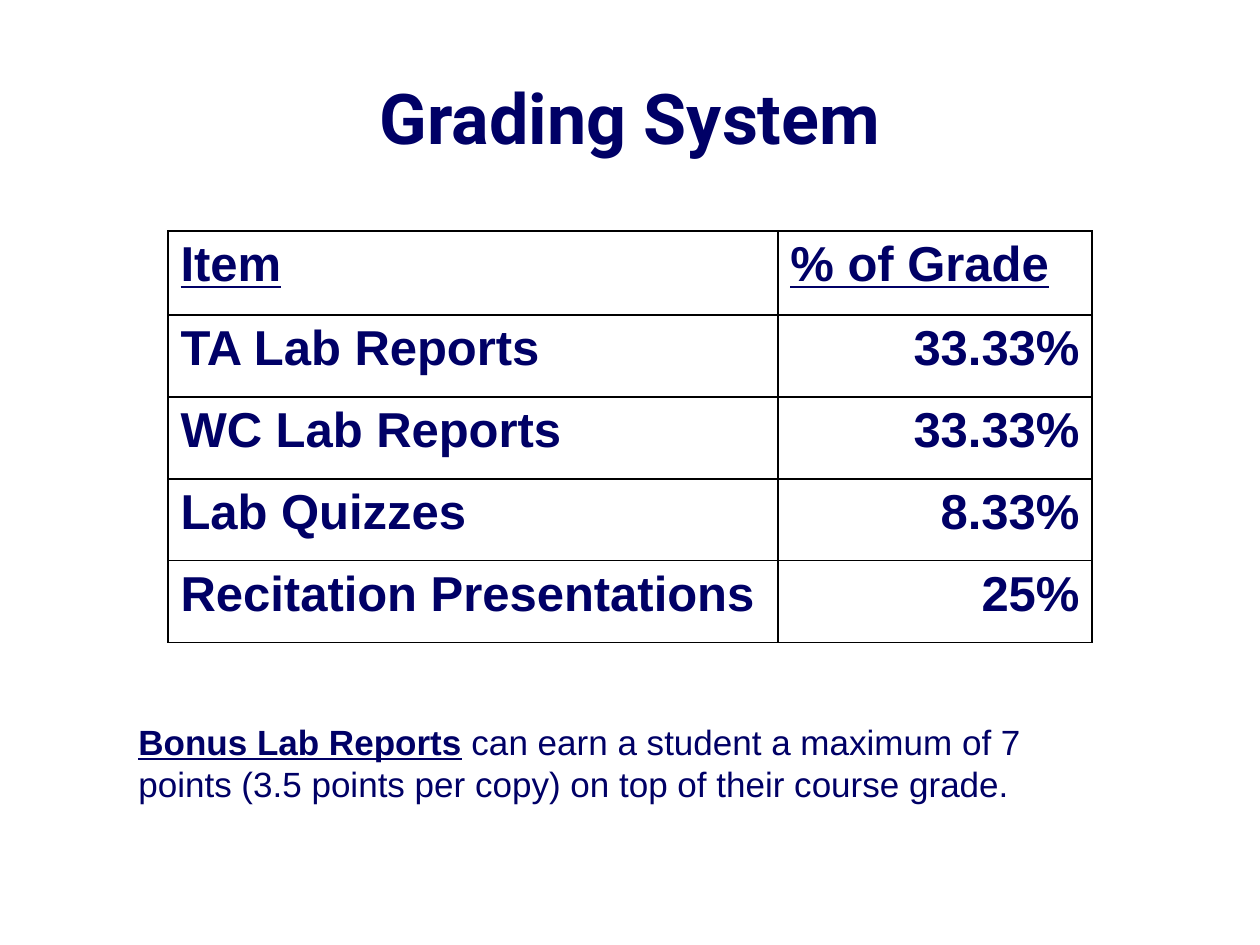
from lxml.etree import SubElement
from pptx import Presentation
from pptx.dml.color import RGBColor
from pptx.enum.text import MSO_ANCHOR, MSO_AUTO_SIZE, PP_ALIGN
from pptx.oxml.ns import qn
from pptx.util import Pt

COLORS = {"ink": "000066", "line": "000000", "paper": "FFFFFF"}
TITLE = {"name": "Roboto", "size": Pt(40), "bold": True}
HEADER = {"name": "Arial", "size": Pt(28), "bold": True, "underline": True}
ENTRY = {**HEADER, "underline": False}
NOTE = {"name": "Arial", "size": Pt(20), "bold": False, "underline": False}
NOTE_LEAD = {**NOTE, "bold": True, "underline": True}
GRADES = [
    ("Item", "% of Grade"),
    ("TA Lab Reports", "33.33%"),
    ("WC Lab Reports", "33.33%"),
    ("Lab Quizzes", "8.33%"),
    ("Recitation Presentations", "25%"),
]
COLUMN_WIDTHS = [348.5, 179.5]
ROW_HEIGHTS = [48] + [46.8] * 4


def add_span(para, text, style):
    """Add a run of text in the given style and the ink colour."""
    span = para.add_run()
    span.text = text
    for name, value in style.items():
        setattr(span.font, name, value)
    span.font.color.rgb = RGBColor.from_string(COLORS["ink"])


def add_borders(cell):
    """Draw a thin line on all four sides of a cell."""
    properties = cell._tc.get_or_add_tcPr()
    for position, side in enumerate(("lnL", "lnR", "lnT", "lnB")):
        line = properties.makeelement(qn(f"a:{side}"), {"w": str(Pt(1))})
        fill = SubElement(line, qn("a:solidFill"))
        SubElement(fill, qn("a:srgbClr"), val=COLORS["line"])
        properties.insert(position, line)


def fill_title(page, box):
    """Place and write the title in its placeholder."""
    title = page.shapes.title
    title.left, title.top, title.width, title.height = map(Pt, box)
    frame = title.text_frame
    frame.vertical_anchor = MSO_ANCHOR.MIDDLE
    para = frame.paragraphs[0]
    para.alignment = PP_ALIGN.CENTER
    add_span(para, "Grading System", TITLE)


def add_grades(page, box):
    """Build the table of graded items and their shares."""
    table = page.shapes.add_table(len(GRADES), len(COLUMN_WIDTHS), *map(Pt, box)).table
    table.first_row = table.horz_banding = False
    for column, width in zip(table.columns, COLUMN_WIDTHS):
        column.width = Pt(width)
    for row, height in zip(table.rows, ROW_HEIGHTS):
        row.height = Pt(height)
    for row_index, entries in enumerate(GRADES):
        for column_index, text in enumerate(entries):
            cell = table.cell(row_index, column_index)
            cell.fill.solid()
            cell.fill.fore_color.rgb = RGBColor.from_string(COLORS["paper"])
            add_borders(cell)
            para = cell.text_frame.paragraphs[0]
            indent = para._p.get_or_add_pPr()
            indent.set("marL", str(Pt(27)))
            indent.set("indent", str(-Pt(27)))
            if row_index and column_index:
                para.alignment = PP_ALIGN.RIGHT
            add_span(para, text, ENTRY if row_index else HEADER)


def add_note(page, box):
    """Write the remark on bonus reports below the table."""
    frame = page.shapes.add_textbox(*map(Pt, box)).text_frame
    frame.word_wrap = True
    frame.auto_size = MSO_AUTO_SIZE.SHAPE_TO_FIT_TEXT
    para = frame.paragraphs[0]
    add_span(para, "Bonus Lab Reports", NOTE_LEAD)
    add_span(
        para,
        " can earn a student a maximum of 7 points"
        " (3.5 points per copy) on top of their course grade.",
        NOTE,
    )


def main():
    """Build the deck and save it."""
    deck = Presentation()
    deck.slide_width, deck.slide_height = Pt(720), Pt(540)
    page = deck.slides.add_slide(deck.slide_layouts[5])
    fill_title(page, (36, 21.6, 648, 90))
    add_grades(page, (96, 132, sum(COLUMN_WIDTHS), sum(ROW_HEIGHTS)))
    add_note(page, (72, 408, 576, 55.6))
    deck.save("out.pptx")


if __name__ == "__main__":
    main()
